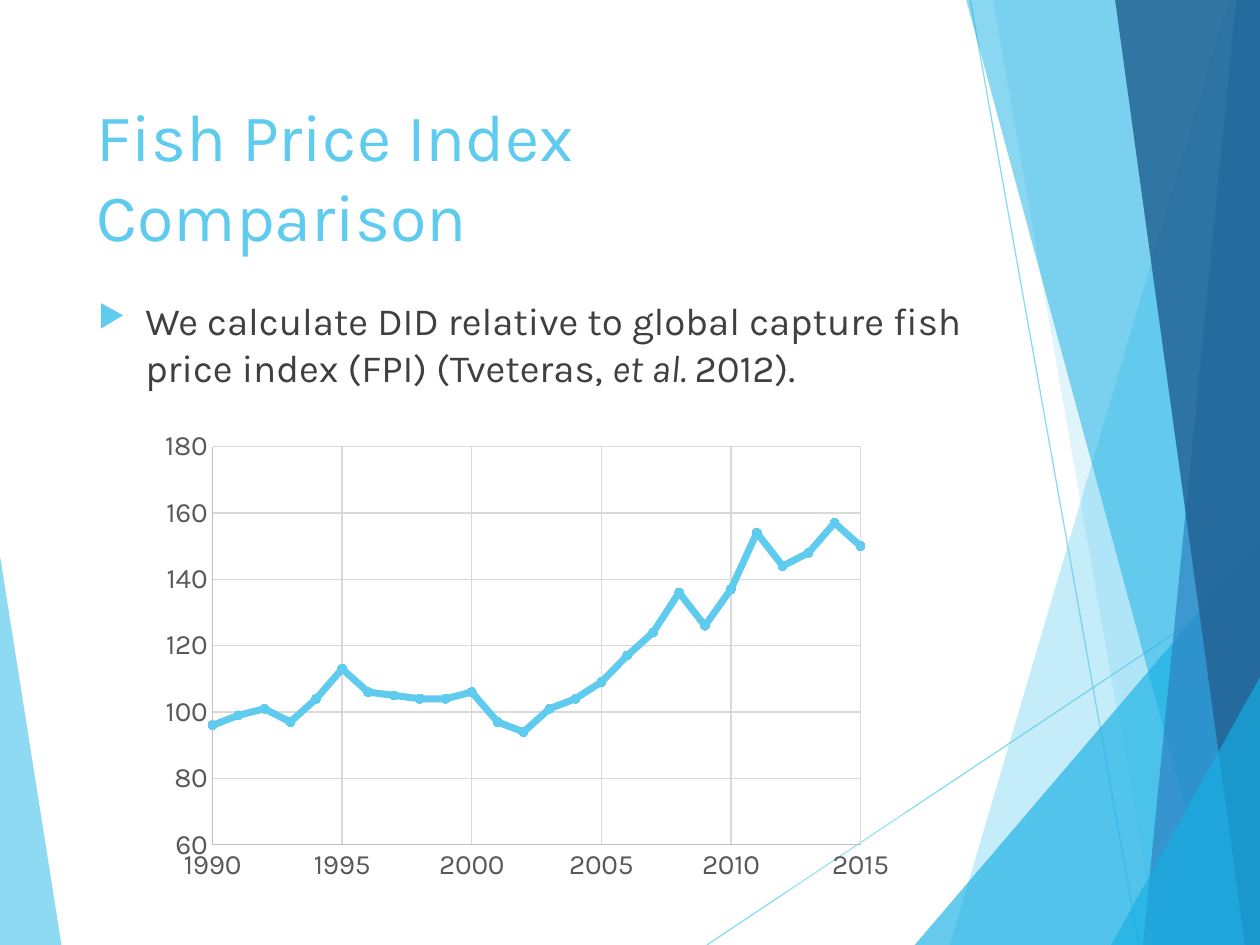
from dataclasses import dataclass

from lxml.etree import SubElement
from pptx import Presentation
from pptx.chart.axis import ValueAxis
from pptx.chart.data import XyChartData
from pptx.dml.color import ColorFormat, RGBColor
from pptx.enum.chart import XL_CHART_TYPE, XL_MARKER_STYLE, XL_TICK_MARK
from pptx.enum.text import MSO_ANCHOR
from pptx.oxml import parse_xml
from pptx.oxml.ns import nsdecls, qn
from pptx.slide import Slide
from pptx.text.text import Font
from pptx.util import Cm, Pt

WIDTH, HEIGHT = 25.4, 19.05
FONT = "Karla"
SKY, AZURE, BLUE, NAVY = "5FCBEF", "17B0E4", "2E83C3", "226292"
TEXT, LABEL, AXIS, GRID = "404040", "595959", "BFBFBF", "D9D9D9"
FISH_PRICES = [
    96, 99, 101, 97, 104, 113, 106, 105, 104, 104, 106, 97, 94,
    101, 104, 109, 117, 124, 136, 126, 137, 154, 144, 148, 157, 150,
]
FIRST_YEAR = 1990


@dataclass
class Facet:
    points: list[tuple[float, float]]
    color: str
    opacity: int


@dataclass
class Ray:
    start: tuple[float, float]
    end: tuple[float, float]


def right_facet(top: float, bottom: float, color: str, opacity: int) -> Facet:
    """Describe a full-height facet that reaches the right edge."""
    return Facet([(top, 0), (bottom, HEIGHT), (WIDTH, HEIGHT), (WIDTH, 0)], color, opacity)


def corner_facet(left: float, top: float) -> Facet:
    """Describe a triangle in the bottom right corner."""
    return Facet([(left, HEIGHT), (WIDTH, top), (WIDTH, HEIGHT)], AZURE, 66)


DECORATION = [
    Facet([(0, 11.2), (1.24, HEIGHT), (0, HEIGHT)], SKY, 70),
    Ray((14.25, HEIGHT), (WIDTH, 11.62)),
    Ray((19.56, 0), (22.96, HEIGHT)),
    right_facet(24.77, 19.15, SKY, 36),
    right_facet(20.02, 23.34, SKY, 20),
    corner_facet(18.44, 10.9),
    right_facet(19.48, 24.64, AZURE, 50),
    right_facet(24.92, 23.04, BLUE, 70),
    right_facet(22.48, 25.1, NAVY, 82),
    corner_facet(22.4, 13.65),
]


def set_color(color: ColorFormat, value: str) -> None:
    """Set a colour from a hex string."""
    color.rgb = RGBColor.from_string(value)


def set_font(font: Font, size: float, color: str) -> None:
    """Set the typeface, size and colour of a font."""
    font.name, font.size = FONT, Pt(size)
    font.fill.solid()
    set_color(font.fill.fore_color, color)


def set_opacity(properties, percent: int) -> None:
    """Give every colour in the shape properties an opacity."""
    for color in properties.iter(qn("a:srgbClr")):
        SubElement(color, qn("a:alpha"), val=str(percent * 1000))


def draw_facet(slide: Slide, facet: Facet) -> None:
    """Draw a translucent polygon without an outline."""
    points = [(Cm(x), Cm(y)) for x, y in facet.points]
    builder = slide.shapes.build_freeform(*points[0])
    builder.add_line_segments(points[1:], close=True)
    shape = builder.convert_to_shape()
    shape.shadow.inherit = False
    shape.line.fill.background()
    shape.fill.solid()
    set_color(shape.fill.fore_color, facet.color)
    set_opacity(shape.element.spPr, facet.opacity)


def draw_ray(slide: Slide, ray: Ray) -> None:
    """Draw a thin translucent line."""
    ends = [Cm(value) for value in (*ray.start, *ray.end)]
    connector = slide.shapes.add_connector(1, *ends)
    connector.line.width = Pt(0.75)
    set_color(connector.line.color, SKY)
    properties = connector.element.spPr
    set_opacity(properties, 70)
    SubElement(properties, qn("a:effectLst"))


def add_paragraph_box(slide: Slide, left: float, top: float, width: float, height: float):
    """Add a wrapping text box and return its text frame."""
    shape = slide.shapes.add_textbox(Cm(left), Cm(top), Cm(width), Cm(height))
    shape.text_frame.word_wrap = True
    return shape.text_frame


def add_title(slide: Slide) -> None:
    """Add the slide title."""
    frame = add_paragraph_box(slide, 1.7, 1.7, 17.63, 3.66)
    frame.vertical_anchor = MSO_ANCHOR.MIDDLE
    paragraph = frame.paragraphs[0]
    paragraph.text = "Fish Price Index Comparison"
    set_font(paragraph.font, 38, SKY)


def add_body(slide: Slide) -> None:
    """Add the bulleted statement."""
    paragraph = add_paragraph_box(slide, 1.73, 5.87, 18, 9.78).paragraphs[0]
    paragraph.space_before = Pt(10)
    for text, italic in (
        ("We calculate DID relative to global capture fish price index (FPI) (Tveteras, ", False),
        ("et al. ", True),
        ("2012).", False),
    ):
        run = paragraph.add_run()
        run.text, run.font.italic = text, italic
        set_font(run.font, 22, TEXT)
    properties = paragraph._p.get_or_add_pPr()
    properties.set("marL", str(Cm(0.95)))
    properties.set("indent", str(-Cm(0.95)))
    bullet_color = SubElement(properties, qn("a:buClr"))
    SubElement(bullet_color, qn("a:srgbClr"), val=SKY)
    SubElement(properties, qn("a:buSzPct"), val="80000")
    SubElement(properties, qn("a:buChar"), char="▶")


def style_axis(axis: ValueAxis, minimum: float, maximum: float, step: float) -> None:
    """Set the scale, grid and labels of an axis."""
    axis.minimum_scale, axis.maximum_scale, axis.major_unit = minimum, maximum, step
    axis.major_tick_mark = axis.minor_tick_mark = XL_TICK_MARK.NONE
    axis.has_major_gridlines = True
    for line, color in ((axis.format.line, AXIS), (axis.major_gridlines.format.line, GRID)):
        line.width = Pt(0.75)
        set_color(line.color, color)
    set_font(axis.tick_labels.font, 16, LABEL)


def place_plot(chart_space) -> None:
    """Fix the inner plot area and the translucent chart background."""
    plot_area = chart_space.find(f".//{qn('c:plotArea')}")
    for layout in plot_area.findall(qn("c:layout")):
        plot_area.remove(layout)
    layout = parse_xml(f"<c:layout {nsdecls('c')}/>")
    manual = SubElement(layout, qn("c:manualLayout"))
    for name, value in (
        ("layoutTarget", "inner"), ("xMode", "edge"), ("yMode", "edge"),
        ("x", "0.08"), ("y", "0.05"), ("w", "0.86"), ("h", "0.85"),
    ):
        SubElement(manual, qn(f"c:{name}"), val=value)
    plot_area.insert(0, layout)
    background = parse_xml(
        f"<c:spPr {nsdecls('c', 'a')}><a:solidFill><a:srgbClr val='FFFFFF'/></a:solidFill>"
        "<a:ln><a:noFill/></a:ln></c:spPr>"
    )
    set_opacity(background, 18)
    chart_space.find(qn("c:chart")).addnext(background)


def add_price_chart(slide: Slide) -> None:
    """Add the scatter line chart of the fish price index."""
    data = XyChartData()
    points = data.add_series("Series 1")
    for year, price in enumerate(FISH_PRICES, FIRST_YEAR):
        points.add_data_point(year, price)
    chart = slide.shapes.add_chart(
        XL_CHART_TYPE.XY_SCATTER_LINES, Cm(3.07), Cm(8.53), Cm(15.19), Cm(9.45), data
    ).chart
    chart.has_title = chart.has_legend = False
    set_font(chart.font, 10, "000000")
    chart.plots[0].vary_by_categories = False
    style_axis(chart.category_axis, FIRST_YEAR, 2015, 5)
    style_axis(chart.value_axis, 60, 180, 20)
    series = chart.plots[0].series[0]
    series.smooth = False
    series.format.line.width = Pt(4)
    set_color(series.format.line.color, SKY)
    series.marker.style, series.marker.size = XL_MARKER_STYLE.CIRCLE, 5
    series.marker.format.fill.solid()
    set_color(series.marker.format.fill.fore_color, SKY)
    set_color(series.marker.format.line.color, SKY)
    place_plot(chart.element)


def main() -> None:
    """Build and save the presentation."""
    presentation = Presentation()
    presentation.slide_width, presentation.slide_height = Cm(WIDTH), Cm(HEIGHT)
    slide = presentation.slides.add_slide(presentation.slide_layouts[6])
    for item in DECORATION:
        if isinstance(item, Facet):
            draw_facet(slide, item)
        else:
            draw_ray(slide, item)
    add_title(slide)
    add_body(slide)
    add_price_chart(slide)
    presentation.save("out.pptx")


if __name__ == "__main__":
    main()
